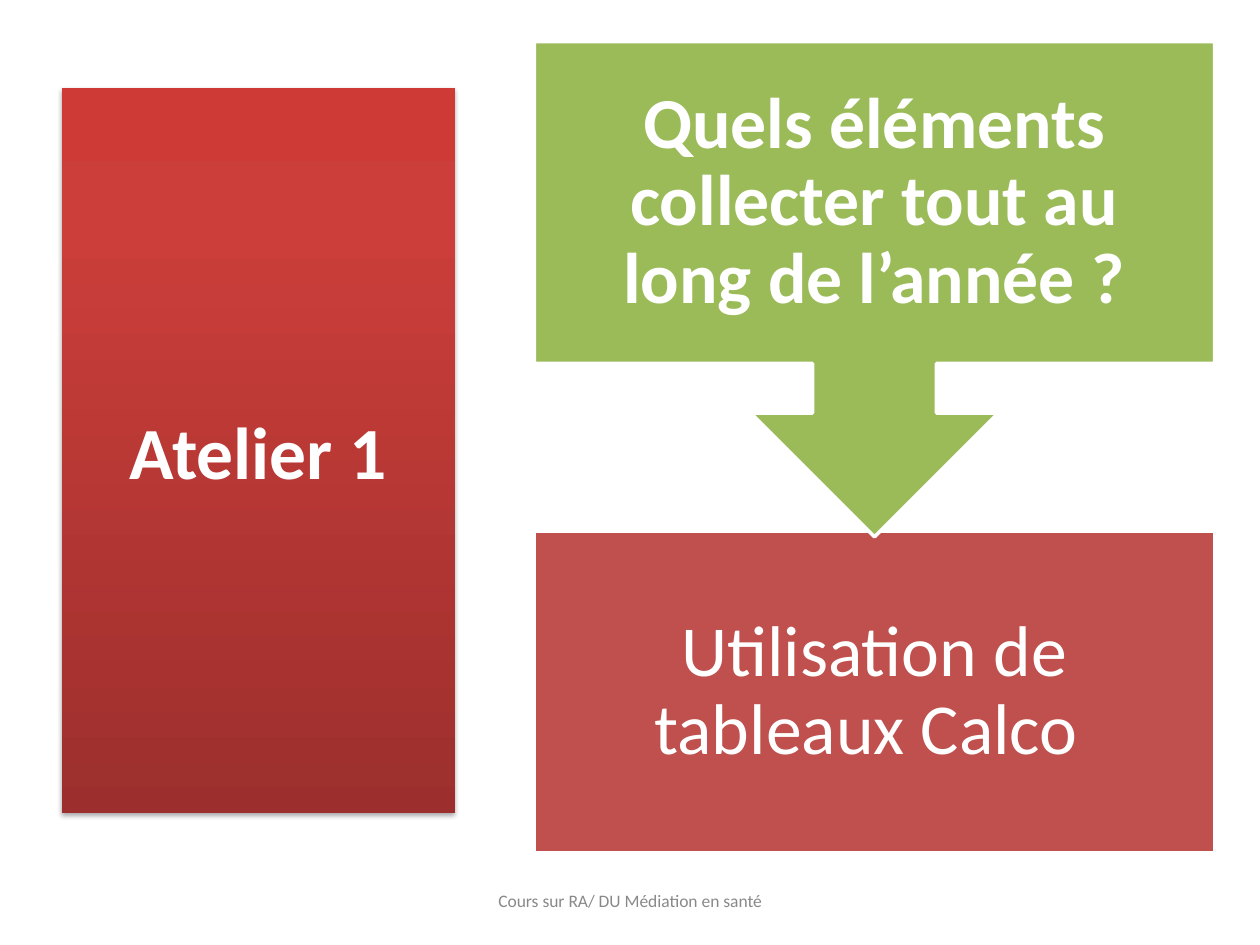
from copy import deepcopy

from lxml import etree
from pptx import Presentation
from pptx.dml.color import RGBColor
from pptx.enum.shapes import MSO_SHAPE
from pptx.enum.text import MSO_ANCHOR, PP_ALIGN
from pptx.oxml import parse_xml
from pptx.util import Pt

RECTANGLE = MSO_SHAPE.RECTANGLE
UP_ARROW_CALLOUT = MSO_SHAPE.UP_ARROW_CALLOUT
MIDDLE = MSO_ANCHOR.MIDDLE
CENTER = PP_ALIGN.CENTER
COLORS = {
    "white": "FFFFFF",
    "footer": "898989",
    "question": "9BBB59",
    "tool": "C0504D",
}
WORKSHOP_STOPS = [(0, "9C2F2D"), (0.8, "CB3E3A"), (1, "CE3B37")]
WORKSHOP_SHADOW = """
<a:effectLst xmlns:a="http://schemas.openxmlformats.org/drawingml/2006/main">
  <a:outerShdw blurRad="39370" dist="22860" dir="5400000" rotWithShape="0">
    <a:srgbClr val="000000"><a:alpha val="35000"/></a:srgbClr>
  </a:outerShdw>
</a:effectLst>"""

STEP_LEFT, STEP_WIDTH, STEP_HEIGHT = 305.3, 388.8, 183.6
QUESTION_TOP, TOOL_TOP = 23.8, 303.8
CALLOUT_HEIGHT = 283


def write(shape, text, size, color="white", bold=False, inset=None, spacing=None):
    frame = shape.text_frame
    frame.word_wrap = True
    frame.vertical_anchor = MIDDLE
    if inset is not None:
        frame.margin_left = frame.margin_right = Pt(inset)
        frame.margin_top = frame.margin_bottom = Pt(inset)
    frame.text = text
    paragraph = frame.paragraphs[0]
    paragraph.alignment = CENTER
    if spacing is not None:
        paragraph.line_spacing = spacing
    font = paragraph.runs[0].font
    font.name, font.size, font.bold = "Calibri", Pt(size), bold
    font.color.rgb = RGBColor.from_string(COLORS[color])


def add_step(kind, top, height, color):
    """Add a flat shape with a white outline in the right-hand column."""
    step = slide.shapes.add_shape(
        kind, Pt(STEP_LEFT), Pt(top), Pt(STEP_WIDTH), Pt(height))
    step.shadow.inherit = False
    step.fill.solid()
    step.fill.fore_color.rgb = RGBColor.from_string(COLORS[color])
    step.line.color.rgb = RGBColor.from_string(COLORS["white"])
    step.line.width = Pt(2)
    return step


prs = Presentation()
prs.slide_width, prs.slide_height = Pt(720), Pt(540)
slide = prs.slides.add_slide(prs.slide_layouts[6])

# Workshop title panel, darkest at the bottom
workshop = slide.shapes.add_shape(RECTANGLE, Pt(35.2), Pt(50.4), Pt(224.7), Pt(414))
workshop.line.fill.background()
workshop.fill.gradient()
workshop.fill.gradient_angle = 90
first_stop = workshop.fill.gradient_stops[0]
stop_list = workshop.element.spPr.find(".//{*}gsLst")
stop_list.insert(1, deepcopy(stop_list[0]))
for stop, (position, color) in zip(workshop.fill.gradient_stops, WORKSHOP_STOPS):
    stop.position = position
    stop.color.rgb = RGBColor.from_string(color)
    etree.strip_elements(stop_list, "{*}tint", "{*}shade", "{*}satMod")
workshop.element.spPr.append(parse_xml(WORKSHOP_SHADOW))
write(workshop, "Atelier 1", 42, bold=True)

footer = slide.shapes.add_textbox(Pt(238.3), Pt(500.4), Pt(243.4), Pt(28.8))
write(footer, "Cours sur RA/ DU Médiation en santé", 10, "footer")

# Tool step, then the question callout pointing down at it
tool = add_step(RECTANGLE, TOOL_TOP, STEP_HEIGHT, "tool")
write(tool, "Utilisation de tableaux Calco ", 41, inset=23, spacing=0.9)

callout = add_step(UP_ARROW_CALLOUT, QUESTION_TOP, CALLOUT_HEIGHT, "question")
callout.rotation = 180
question = slide.shapes.add_textbox(
    Pt(STEP_LEFT), Pt(QUESTION_TOP), Pt(STEP_WIDTH), Pt(STEP_HEIGHT))
write(question, "Quels éléments collecter tout au long de l’année ?", 41,
      bold=True, inset=23, spacing=0.9)

prs.save("out.pptx")
